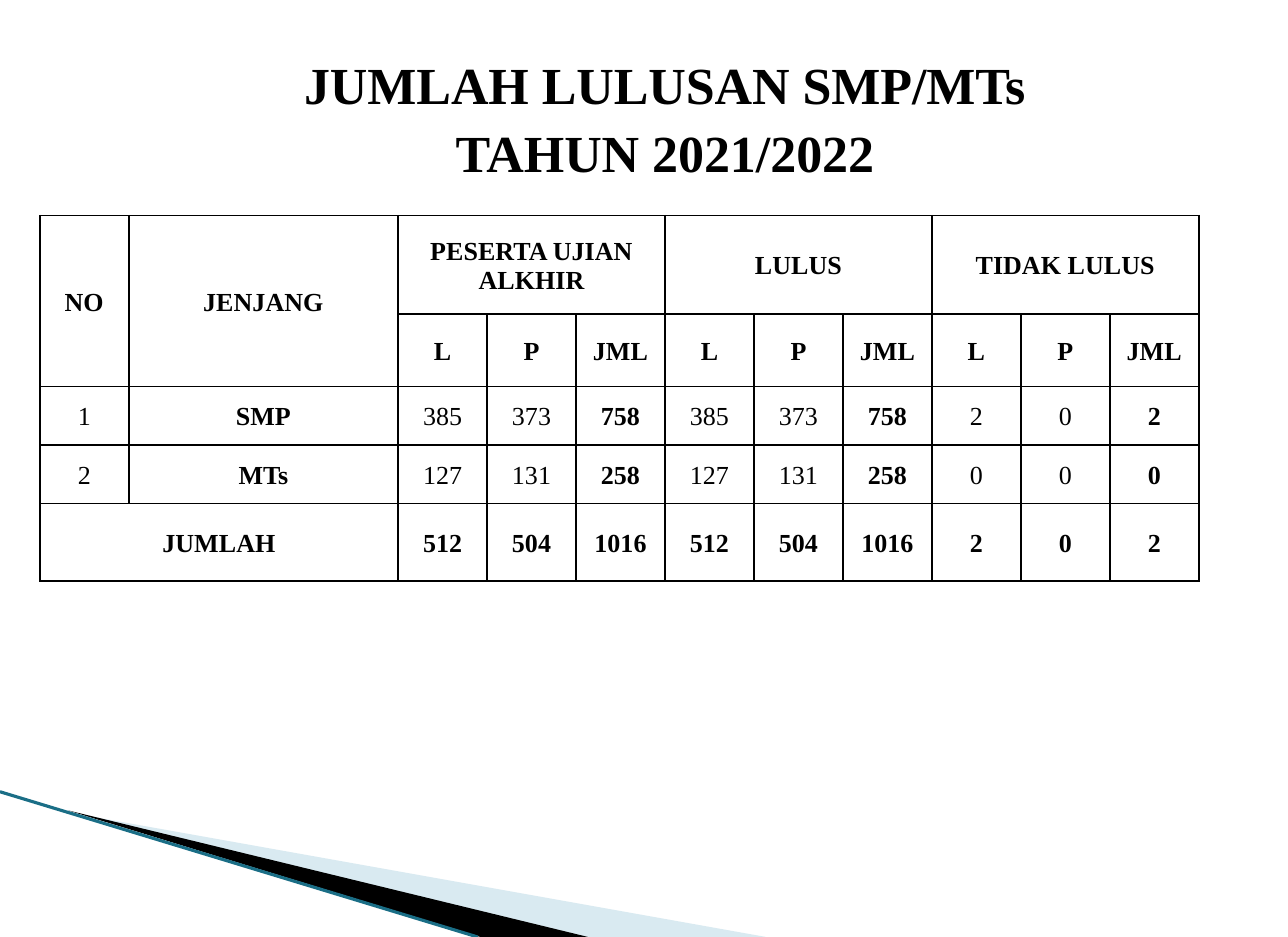
from lxml import etree
from pptx import Presentation
from pptx.dml.color import RGBColor
from pptx.enum.shapes import MSO_CONNECTOR
from pptx.enum.text import MSO_ANCHOR, PP_ALIGN
from pptx.oxml.ns import qn
from pptx.util import Inches, Pt

STRAIGHT = MSO_CONNECTOR.STRAIGHT
MIDDLE = MSO_ANCHOR.MIDDLE
CENTER = PP_ALIGN.CENTER

BLACK = RGBColor(0x00, 0x00, 0x00)
WHITE = RGBColor(0xFF, 0xFF, 0xFF)
PALE_BLUE = RGBColor(0xA0, 0xCB, 0xDC)
TEAL = RGBColor(0x1A, 0x6E, 0x86)
FONT = "Times New Roman"

SLIDE_W, SLIDE_H = 5.5, 4
TITLE = "JUMLAH LULUSAN SMP/MTs\vTAHUN 2021/2022"
GROUPS = ["PESERTA UJIAN ALKHIR", "LULUS", "TIDAK LULUS"]
MEASURES = ["L", "P", "JML"]
LEVELS = [
    ("1", "SMP", [385, 373, 758, 385, 373, 758, 2, 0, 2]),
    ("2", "MTs", [127, 131, 258, 127, 131, 258, 0, 0, 0]),
]
TOTALS = [512, 504, 1016, 512, 504, 1016, 2, 0, 2]

TABLE_LEFT, TABLE_TOP = 0.17, 0.92
NARROW, WIDE = 0.38, 1.15
COLUMN_WIDTHS = [NARROW, WIDE] + [NARROW] * len(TOTALS)
ROW_HEIGHTS = [0.42, 0.31, 0.25, 0.25, 0.33]
FIRST_VALUE = 2  # column where the figures start

PALE_WEDGE = [(0.3, 3.47), (3.27, SLIDE_H), (2.51, SLIDE_H)]
DARK_WEDGE = [(0.29, 3.46), (2.51, SLIDE_H), (2.05, SLIDE_H)]


def write(frame, text, size=8, bold=True, spacing=None):
    paragraph = frame.paragraphs[0]
    paragraph.text = text
    paragraph.alignment = CENTER
    paragraph.line_spacing = spacing
    for run in paragraph.runs:
        run.font.name = FONT
        run.font.size = Pt(size)
        run.font.bold = bold
        run.font.color.rgb = BLACK


def set_alpha(shape, percent):
    color = shape.fill._xPr.find(qn("a:solidFill"))[0]
    etree.SubElement(color, qn("a:alpha"), val=str(percent * 1000))


def add_wedge(slide, points, color):
    corners = [(Inches(x), Inches(y)) for x, y in points]
    builder = slide.shapes.build_freeform(*corners[0])
    builder.add_line_segments(corners[1:], close=True)
    wedge = builder.convert_to_shape()
    wedge.shadow.inherit = False
    wedge.fill.solid()
    wedge.fill.fore_color.rgb = color
    wedge.line.fill.background()
    return wedge


def add_decoration(slide):
    set_alpha(add_wedge(slide, PALE_WEDGE, PALE_BLUE), 40)
    add_wedge(slide, DARK_WEDGE, BLACK)
    edge = slide.shapes.add_connector(
        STRAIGHT, 0, Inches(3.38), Inches(2.04), Inches(SLIDE_H))
    edge.line.color.rgb = TEAL
    edge.line.width = Pt(0.95)
    etree.SubElement(edge._element.spPr, qn("a:effectLst"))


def add_title(slide):
    box = slide.shapes.add_textbox(
        Inches(0.42), Inches(0.25), Inches(4.84), Inches(0.48))
    frame = box.text_frame
    frame.word_wrap = True
    frame.vertical_anchor = MIDDLE
    frame.margin_left = frame.margin_right = Inches(0.05)
    frame.margin_top = frame.margin_bottom = Inches(0.03)
    write(frame, TITLE, size=16, spacing=1.09)


def style_cell(cell):
    """White fill, tight margins and a thin black border on every side."""
    cell.vertical_anchor = MIDDLE
    cell.margin_left = cell.margin_right = cell.margin_top = Inches(0.01)
    cell.margin_bottom = 0
    properties = cell._tc.get_or_add_tcPr()
    for side in ("lnL", "lnR", "lnT", "lnB"):
        border = etree.SubElement(properties, qn(f"a:{side}"), w=str(Pt(0.5)))
        fill = etree.SubElement(border, qn("a:solidFill"))
        etree.SubElement(fill, qn("a:srgbClr"), val=str(BLACK))
    cell.fill.solid()
    cell.fill.fore_color.rgb = WHITE


def add_graduate_table(slide):
    table = slide.shapes.add_table(
        len(ROW_HEIGHTS), len(COLUMN_WIDTHS),
        Inches(TABLE_LEFT), Inches(TABLE_TOP),
        Inches(sum(COLUMN_WIDTHS)), Inches(sum(ROW_HEIGHTS))).table
    table.first_row = table.horz_banding = False
    for column, width in zip(table.columns, COLUMN_WIDTHS):
        column.width = Inches(width)
    for row, height in zip(table.rows, ROW_HEIGHTS):
        row.height = Inches(height)
    for cell in table.iter_cells():
        style_cell(cell)

    def put(row, column, text, rows=1, columns=1, bold=True):
        cell = table.cell(row, column)
        if rows * columns > 1:
            cell.merge(table.cell(row + rows - 1, column + columns - 1))
        write(cell.text_frame, str(text), bold=bold)

    put(0, 0, "NO", rows=2)
    put(0, 1, "JENJANG", rows=2)
    span = len(MEASURES)
    for g, group in enumerate(GROUPS):
        start = FIRST_VALUE + g * span
        put(0, start, group, columns=span)
        for m, measure in enumerate(MEASURES):
            put(1, start + m, measure)

    for row, (number, level, values) in enumerate(LEVELS, start=2):
        put(row, 0, number, bold=False)
        put(row, 1, level)
        for i, value in enumerate(values):
            put(row, FIRST_VALUE + i, value, bold=i % span == span - 1)

    last = len(ROW_HEIGHTS) - 1
    put(last, 0, "JUMLAH", columns=2)
    for i, total in enumerate(TOTALS):
        put(last, FIRST_VALUE + i, total)


def main():
    prs = Presentation()
    prs.slide_width, prs.slide_height = Inches(SLIDE_W), Inches(SLIDE_H)
    slide = prs.slides.add_slide(prs.slide_layouts[6])
    add_decoration(slide)
    add_title(slide)
    add_graduate_table(slide)
    prs.save("out.pptx")


if __name__ == "__main__":
    main()
